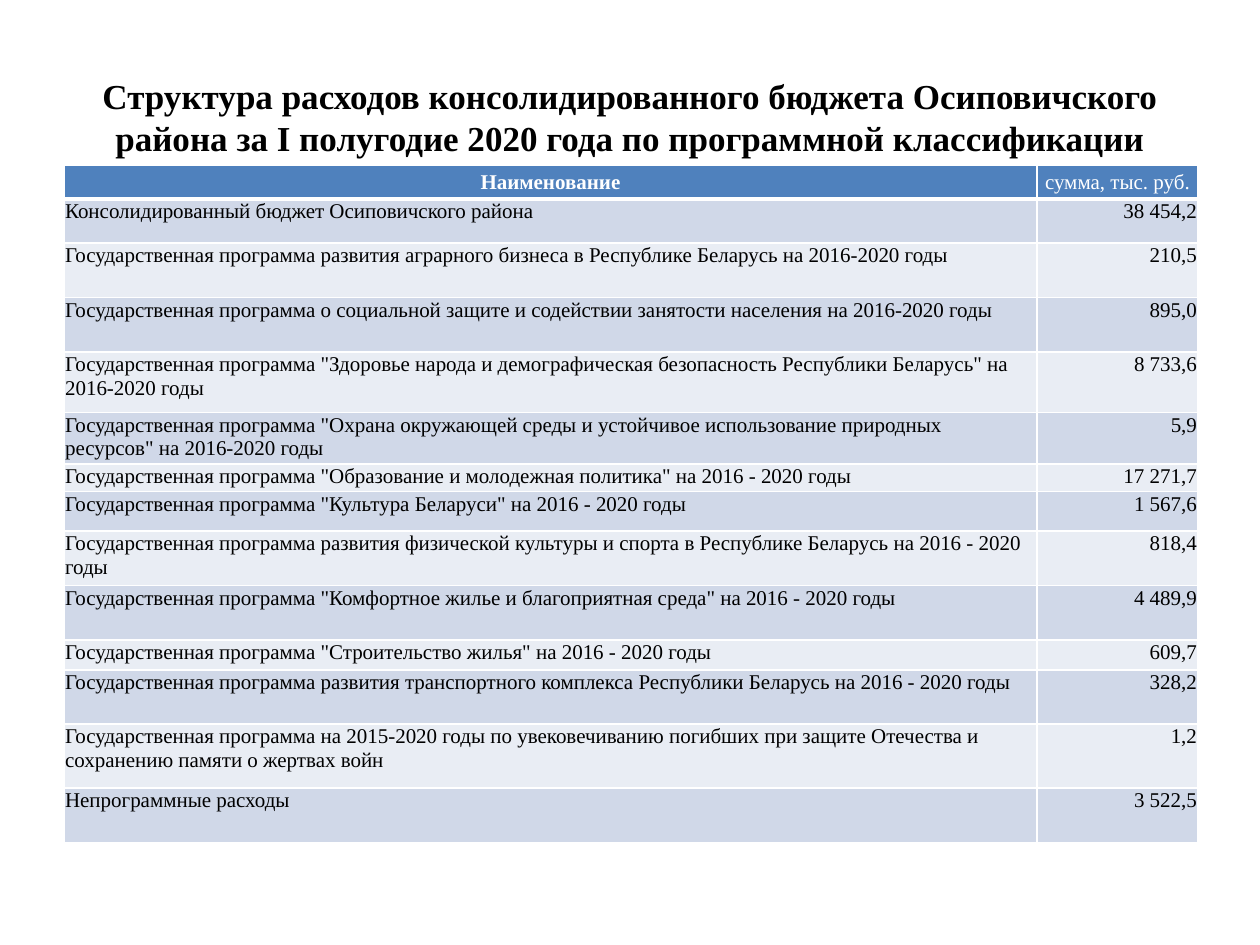
from dataclasses import dataclass
from typing import NamedTuple

from lxml.etree import SubElement
from pptx import Presentation
from pptx.dml.color import RGBColor as Color
from pptx.enum.text import MSO_ANCHOR as Anchor, PP_ALIGN as Align
from pptx.oxml.ns import qn
from pptx.util import Pt


@dataclass(frozen=True)
class Theme:
    font: str = "Times New Roman"
    title_size: float = 20
    table_size: float = 12
    ink: str = "000000"
    paper: str = "FFFFFF"
    header: str = "4F81BD"
    bands: tuple = ("D0D8E8", "E9EDF4")
    thin: float = 1
    thick: float = 3


class Frame(NamedTuple):
    left: float
    top: float
    width: float
    height: float


class Expense(NamedTuple):
    name: str
    amount: str
    height: float


class CellStyle(NamedTuple):
    fill: str
    color: str
    bold: bool
    align: Align
    anchor: Anchor
    top_line: float
    bottom_line: float


THEME = Theme()
SLIDE_SIZE = (720, 540)
TITLE_FRAME = Frame(36, 21.6, 648, 90)
TABLE_FRAME = Frame(36.6, 94.6, 648, 385.3)
COLUMN_WIDTHS = (556, 92)
CELL_INSETS = {"margin_left": 0.6, "margin_top": 0.6, "margin_right": 0.6, "margin_bottom": 0}
TITLE = ("Структура расходов консолидированного бюджета Осиповичского района "
         "за I полугодие 2020 года по программной классификации")
HEADER = Expense("Наименование", "сумма, тыс. руб.", 19.2)
PROGRAM = "Государственная программа"
EXPENSES = (
    Expense("Консолидированный бюджет Осиповичского района", "38 454,2", 25.2),
    Expense(f"{PROGRAM} развития аграрного бизнеса в Республике Беларусь на 2016-2020 годы",
            "210,5", 31.1),
    Expense(f"{PROGRAM} о социальной защите и содействии занятости населения на 2016-2020 годы",
            "895,0", 31.1),
    Expense(f'{PROGRAM} "Здоровье народа и демографическая безопасность Республики Беларусь" '
            "на 2016-2020 годы", "8 733,6", 34.6),
    Expense(f'{PROGRAM} "Охрана окружающей среды и устойчивое использование природных ресурсов" '
            "на 2016-2020 годы", "5,9", 28.1),
    Expense(f'{PROGRAM} "Образование и молодежная политика" на 2016 - 2020 годы', "17 271,7", 15.8),
    Expense(f'{PROGRAM} "Культура Беларуси" на 2016 - 2020 годы', "1 567,6", 22.6),
    Expense(f"{PROGRAM} развития физической культуры и спорта в Республике Беларусь "
            "на 2016 - 2020 годы", "818,4", 31.1),
    Expense(f'{PROGRAM} "Комфортное жилье и благоприятная среда" на 2016 - 2020 годы',
            "4 489,9", 31.1),
    Expense(f'{PROGRAM} "Строительство жилья" на 2016 - 2020 годы', "609,7", 17),
    Expense(f"{PROGRAM} развития транспортного комплекса Республики Беларусь на 2016 - 2020 годы",
            "328,2", 31.1),
    Expense(f"{PROGRAM} на 2015-2020 годы по увековечиванию погибших при защите Отечества "
            "и сохранению памяти о жертвах войн", "1,2", 36.4),
    Expense("Непрограммные расходы", "3 522,5", 31.1),
)


def apply_format(target, values: dict) -> None:
    for name, value in values.items():
        setattr(target, name, value)


def write_text(text_frame, text: str, size: float, color: str, bold: bool, align: Align) -> None:
    para = text_frame.paragraphs[0]
    para.alignment = align
    span = para.add_run()
    span.text = text
    apply_format(span.font, {"name": THEME.font, "size": Pt(size), "bold": bold})
    span.font.color.rgb = Color.from_string(color)


def add_title(page, frame: Frame) -> None:
    box = page.shapes.add_textbox(*map(Pt, frame))
    apply_format(box.text_frame, {"word_wrap": True, "vertical_anchor": Anchor.MIDDLE})
    write_text(box.text_frame, TITLE, THEME.title_size, THEME.ink, True, Align.CENTER)


def draw_borders(cell, top: float, bottom: float) -> None:
    properties = cell._tc.get_or_add_tcPr()
    widths = {"a:lnL": THEME.thin, "a:lnR": THEME.thin, "a:lnT": top, "a:lnB": bottom}
    for tag, width in widths.items():
        line = SubElement(properties, qn(tag), w=str(Pt(width)))
        fill = SubElement(line, qn("a:solidFill"))
        SubElement(fill, qn("a:srgbClr"), val=THEME.paper)


def fill_cell(cell, text: str, style: CellStyle) -> None:
    apply_format(cell, {name: Pt(inset) for name, inset in CELL_INSETS.items()})
    cell.vertical_anchor = style.anchor
    draw_borders(cell, style.top_line, style.bottom_line)
    cell.fill.solid()
    cell.fill.fore_color.rgb = Color.from_string(style.fill)
    write_text(cell.text_frame, text, THEME.table_size, style.color, style.bold, style.align)


def cell_style(row: int, column: int) -> CellStyle:
    if row == 0:
        return CellStyle(THEME.header, THEME.paper, column == 0, Align.CENTER, Anchor.MIDDLE,
                         THEME.thin, THEME.thick)
    align = (Align.LEFT, Align.RIGHT)[column]
    top_line = THEME.thick if row == 1 else THEME.thin
    return CellStyle(THEME.bands[(row - 1) % 2], THEME.ink, False, align, Anchor.TOP,
                     top_line, THEME.thin)


def add_expense_table(page, frame: Frame) -> None:
    rows = (HEADER, *EXPENSES)
    table = page.shapes.add_table(len(rows), len(COLUMN_WIDTHS), *map(Pt, frame)).table
    for column, width in zip(table.columns, COLUMN_WIDTHS):
        column.width = Pt(width)
    for row, expense in enumerate(rows):
        table.rows[row].height = Pt(expense.height)
        for column, text in enumerate((expense.name, expense.amount)):
            fill_cell(table.cell(row, column), text, cell_style(row, column))


def main() -> None:
    deck = Presentation()
    deck.slide_width, deck.slide_height = map(Pt, SLIDE_SIZE)
    page = deck.slides.add_slide(deck.slide_layouts[6])
    add_title(page, TITLE_FRAME)
    add_expense_table(page, TABLE_FRAME)
    deck.save("out.pptx")


if __name__ == "__main__":
    main()
